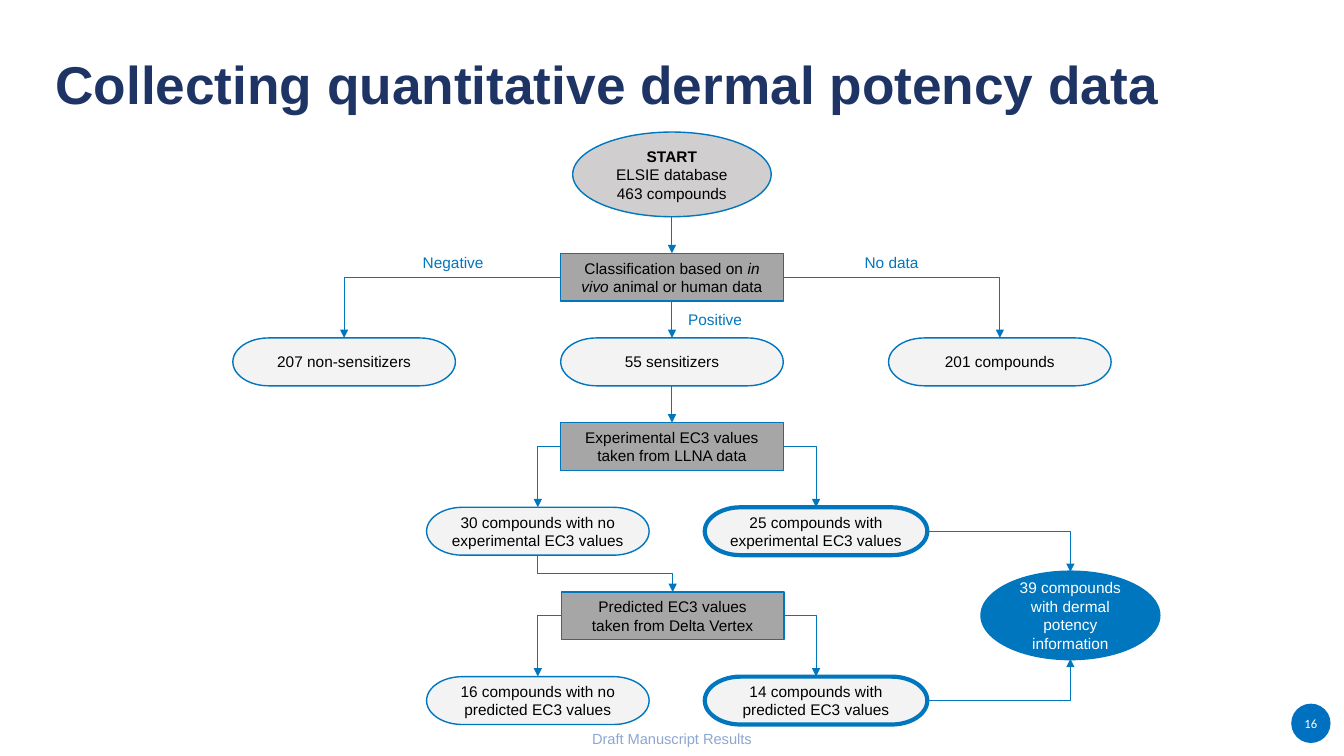
import pptx
import pptx.dml.color
import pptx.enum.shapes
import pptx.enum.text
import pptx.oxml.ns
import pptx.oxml.xmlchemy
import pptx.util
from dataclasses import dataclass

Pt = pptx.util.Pt
qn = pptx.oxml.ns.qn
Preset = pptx.enum.shapes.MSO_SHAPE
Link = pptx.enum.shapes.MSO_CONNECTOR
Align = pptx.enum.text.PP_ALIGN
Anchor = pptx.enum.text.MSO_ANCHOR
TOP, LEFT, BOTTOM, RIGHT = range(4)


@dataclass(frozen=True)
class Theme:
    font: str = "Arial"
    number_font: str = "Calibri"
    blue: str = "0076BF"
    badge: str = "0070C0"
    navy: str = "1E3465"
    pale_blue: str = "8CA7D1"
    light: str = "F3F3F3"
    silver: str = "D0CECE"
    grey: str = "A6A6A6"
    black: str = "000000"
    white: str = "FFFFFF"
    title_size: float = 38
    body_size: float = 11
    footer_size: float = 10.5
    number_size: float = 9


def rgb(value):
    return pptx.dml.color.RGBColor.from_string(value)


class FlowSlide:
    def __init__(self, page, theme):
        self.page = page
        self.theme = theme

    def style(self, frame, size, color, align=Align.CENTER, font=None, bold=None):
        for para in frame.paragraphs:
            para.alignment = align
            for span in para.runs:
                span.font.name = font or self.theme.font
                span.font.size = Pt(size)
                span.font.color.rgb = rgb(color)
                span.font.bold = bold

    def text(self, words, left, top, width, height, size, color,
             align=Align.CENTER, anchor=Anchor.TOP, bold=None):
        box = self.page.shapes.add_textbox(Pt(left), Pt(top), Pt(width), Pt(height))
        frame = box.text_frame
        frame.word_wrap = True
        frame.vertical_anchor = anchor
        frame.text = words
        self.style(frame, size, color, align, bold=bold)
        return box

    def label(self, words, left, top, width):
        return self.text(words, left, top, width, 20.6,
                         self.theme.body_size, self.theme.blue)

    def node(self, preset, words, center_x, center_y, fill, width=159, height=34.2,
             border=1, color=None, italic_words="", ending=""):
        node = self.page.shapes.add_shape(
            preset, Pt(center_x - width / 2), Pt(center_y - height / 2),
            Pt(width), Pt(height))
        node.shadow.inherit = False
        node.fill.solid()
        node.fill.fore_color.rgb = rgb(fill)
        node.line.color.rgb = rgb(self.theme.blue)
        node.line.width = Pt(border)
        frame = node.text_frame
        frame.word_wrap = True
        frame.vertical_anchor = Anchor.MIDDLE
        frame.text = words
        if italic_words:
            span = frame.paragraphs[0].add_run()
            span.text = italic_words
            span.font.italic = True
            frame.paragraphs[0].add_run().text = ending
        self.style(frame, self.theme.body_size, color or self.theme.black)
        return node

    def step(self, words, center_x, center_y, **options):
        return self.node(Preset.RECTANGLE, words, center_x, center_y,
                         self.theme.grey, **options)

    def outcome(self, words, center_x, center_y, **options):
        return self.node(Preset.FLOWCHART_TERMINATOR, words, center_x, center_y,
                         self.theme.light, **options)

    def badge(self, words, left, top, size):
        badge = self.page.shapes.add_shape(Preset.OVAL, Pt(left), Pt(top),
                                           Pt(size), Pt(size))
        badge.shadow.inherit = False
        badge.fill.solid()
        badge.fill.fore_color.rgb = rgb(self.theme.badge)
        badge.line.fill.background()
        frame = badge.text_frame
        frame.margin_left = frame.margin_right = 0
        frame.margin_top = frame.margin_bottom = 0
        frame.vertical_anchor = Anchor.MIDDLE
        frame.text = words
        self.style(frame, self.theme.number_size, self.theme.white,
                   font=self.theme.number_font)

    def arrow(self, start, start_side, finish, finish_side, preset=None):
        kind = Link.ELBOW if preset else Link.STRAIGHT
        arrow = self.page.shapes.add_connector(kind, 0, 0, 0, 0)
        arrow.begin_connect(start, start_side)
        arrow.end_connect(finish, finish_side)
        # An ellipse has eight connection sites, so its sides count in twos
        for tag, node, side in (("a:stCxn", start, start_side),
                                ("a:endCxn", finish, finish_side)):
            if node.auto_shape_type == Preset.OVAL:
                arrow._element.xpath(".//" + tag)[0].set("idx", str(2 * side))
        arrow.line.color.rgb = rgb(self.theme.blue)
        arrow.line.width = Pt(0.75)
        properties = arrow._element.spPr
        head = pptx.oxml.xmlchemy.OxmlElement("a:tailEnd")
        head.set("type", "triangle")
        properties.find(qn("a:ln")).append(head)
        properties.append(pptx.oxml.xmlchemy.OxmlElement("a:effectLst"))
        if preset:
            properties.find(qn("a:prstGeom")).set("prst", preset)
        return arrow

    def corner(self, start, start_side, finish, finish_side):
        return self.arrow(start, start_side, finish, finish_side, "bentConnector2")

    def dogleg(self, start, finish):
        """Down, across to the right, and down again."""
        arrow = self.arrow(start, BOTTOM, finish, TOP, "bentConnector3")
        left, top, across, drop = arrow.left, arrow.top, arrow.width, arrow.height
        arrow.left = left + (across - drop) // 2
        arrow.top = top + (drop - across) // 2
        arrow.width, arrow.height = drop, across
        turn = arrow._element.spPr.find(qn("a:xfrm"))
        turn.set("rot", "5400000")
        turn.set("flipV", "1")


def main():
    deck = pptx.Presentation()
    deck.slide_width, deck.slide_height = Pt(960), Pt(540)
    theme = Theme()
    flow = FlowSlide(deck.slides.add_slide(deck.slide_layouts[6]), theme)

    # Title, footer and page number
    title = flow.text("Collecting quantitative dermal potency data", 39.6, 29.5, 861, 51,
                      theme.title_size, theme.navy, Align.LEFT, bold=True)
    title.text_frame.margin_left = 0
    title.text_frame.margin_top = Pt(7.2)
    flow.text("Draft Manuscript Results", 0, 513.4, 960, 28.8,
              theme.footer_size, theme.pale_blue, anchor=Anchor.MIDDLE)
    flow.badge("16", 922.3, 502.6, 28.1)

    # Row centres and column centres of the chart
    rows = [198 + 60.48 * row for row in range(6)]
    middle, branch = 480, 234.2
    without, with_values = 384.2, 582.9

    # Start and classification
    start = flow.node(Preset.OVAL, "START\nELSIE database\n463 compounds",
                      middle, 124.6, theme.silver, 141.8, 60.5)
    start.text_frame.paragraphs[0].runs[0].font.bold = True
    classify = flow.step("Classification based on ", middle, rows[0],
                         italic_words="in vivo", ending=" animal or human data")
    negative = flow.outcome("207 non-sensitizers", middle - branch, rows[1])
    positive = flow.outcome("55 sensitizers", middle, rows[1])
    no_data = flow.outcome("201 compounds", middle + branch, rows[1])

    # Experimental and predicted values
    measured = flow.step("Experimental EC3 values\ntaken from LLNA data",
                         middle, rows[2])
    unmeasured_set = flow.outcome("30 compounds with no experimental EC3 values",
                                  without, rows[3])
    measured_set = flow.outcome("25 compounds with experimental EC3 values",
                                with_values, rows[3], border=3)
    predicted = flow.step("Predicted EC3 values\ntaken from Delta Vertex",
                          middle + 0.5, rows[4])
    unpredicted_set = flow.outcome("16 compounds with no predicted EC3 values",
                                   without, rows[5])
    predicted_set = flow.outcome("14 compounds with predicted EC3 values",
                                 with_values, rows[5], border=3)
    result = flow.node(Preset.OVAL, "39 compounds with dermal potency information",
                       764.6, 439.6, theme.blue, 126.7, 62.2, border=2,
                       color=theme.white)

    # Straight arrows down the middle
    for upper, lower in ((start, classify), (classify, positive), (positive, measured)):
        flow.arrow(upper, BOTTOM, lower, TOP)

    # Branches to the left and right of each step
    for step, left_node, right_node in ((classify, negative, no_data),
                                        (measured, unmeasured_set, measured_set),
                                        (predicted, unpredicted_set, predicted_set)):
        flow.corner(step, LEFT, left_node, TOP)
        flow.corner(step, RIGHT, right_node, TOP)
    flow.dogleg(unmeasured_set, predicted)
    flow.corner(measured_set, RIGHT, result, TOP)
    flow.corner(predicted_set, RIGHT, result, BOTTOM)

    # Branch labels
    flow.label("Negative", 261.4, 177.1, 124.6)
    flow.label("No data", 581.8, 177.1, 110.2)
    flow.label("Positive", 480.2, 218.2, 61.2)

    deck.save("out.pptx")


if __name__ == "__main__":
    main()
